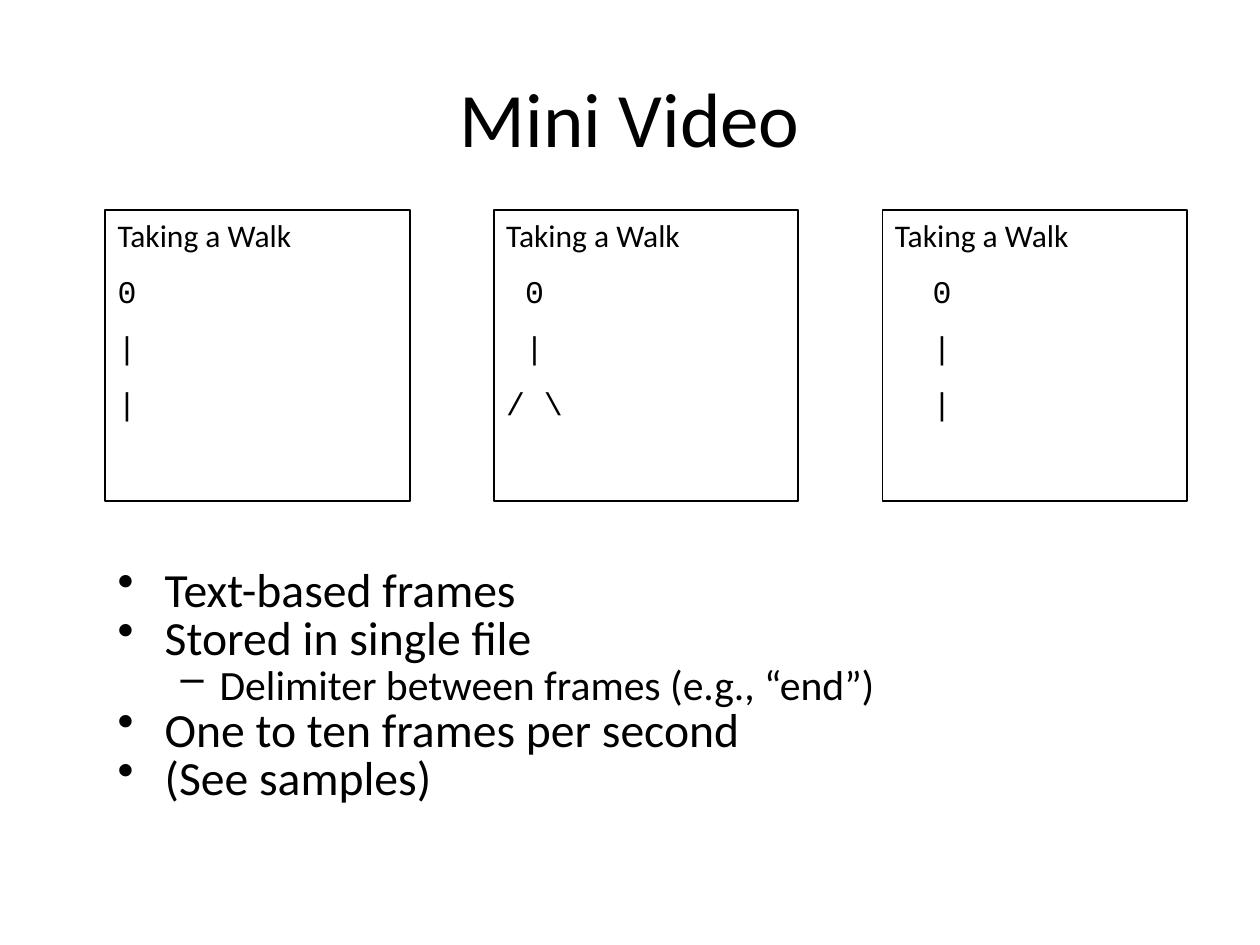
import pptx
import pptx.dml.color
import pptx.enum.shapes
import pptx.enum.text
import pptx.oxml.ns
import pptx.util
from lxml import etree

Cm = pptx.util.Cm
Pt = pptx.util.Pt
COLOURS = {"ink": "000000", "paper": "FFFFFF"}
TEXT_FONT = "Calibri"
FIGURE_FONT = "Courier New"

# Each video frame: how many columns each line is moved in, and its text
FRAMES = [
    [(0, "0"), (0, "|"), (0, "|")],
    [(1, "0"), (1, "|"), (0, "/ \\")],
    [(2, "0"), (2, "|"), (2, "|")],
]
POINTS = [
    (0, "Text-based frames"),
    (0, "Stored in single file"),
    (1, "Delimiter between frames (e.g., “end”)"),
    (0, "One to ten frames per second"),
    (0, "(See samples)"),
]
# Per level: bullet, text size, left margin and hanging indent in cm
LEVELS = [("•", 27.2, 0.95, 0.95), ("–", 23.8, 2.06, 0.79)]


def colour(name):
    return pptx.dml.color.RGBColor.from_string(COLOURS[name])


def add_span(para, text, size, font=TEXT_FONT):
    span = para.add_run()
    span.text = text
    span.font.size = Pt(size)
    span.font.name = font
    span.font.color.rgb = colour("ink")


def next_para(text_frame, index):
    return text_frame.paragraphs[0] if index == 0 else text_frame.add_paragraph()


def set_indent(para, margin, hanging=0):
    properties = para._p.get_or_add_pPr()
    properties.set("marL", str(Cm(margin)))
    properties.set("indent", str(-Cm(hanging)))
    return properties


def add_title(page, left, top, width, height):
    box = page.shapes.add_textbox(Cm(left), Cm(top), Cm(width), Cm(height))
    box.text_frame.word_wrap = True
    box.text_frame.vertical_anchor = pptx.enum.text.MSO_ANCHOR.MIDDLE
    para = box.text_frame.paragraphs[0]
    para.alignment = pptx.enum.text.PP_ALIGN.CENTER
    add_span(para, "Mini Video", 44)


def add_video_frame(page, figure, left, top, width, height):
    box = page.shapes.add_shape(pptx.enum.shapes.MSO_SHAPE.RECTANGLE,
                                Cm(left), Cm(top), Cm(width), Cm(height))
    box.shadow.inherit = False
    box.fill.background()
    box.line.color.rgb = colour("ink")
    box.line.width = Pt(1)
    box.text_frame.word_wrap = True
    box.text_frame.vertical_anchor = pptx.enum.text.MSO_ANCHOR.TOP

    column = 0.38  # width of one 18 pt monospaced character
    lines = [(0, "Taking a Walk", TEXT_FONT)]
    lines += [(shift, text, FIGURE_FONT) for shift, text in figure]
    for index, (shift, text, font) in enumerate(lines):
        para = next_para(box.text_frame, index)
        para.alignment = pptx.enum.text.PP_ALIGN.LEFT
        para.space_before = Pt(10.5 if index else 0)
        set_indent(para, shift * column)
        add_span(para, text, 18, font)


def add_film_strip(page, left, top, width, height):
    frame_width = 6.14
    pitch = (width - frame_width) / (len(FRAMES) - 1)
    for index, figure in enumerate(FRAMES):
        add_video_frame(page, figure, left + index * pitch, top, frame_width, height)


def add_points(page, left, top, width, height):
    box = page.shapes.add_textbox(Cm(left), Cm(top), Cm(width), Cm(height))
    box.text_frame.word_wrap = True
    for index, (level, text) in enumerate(POINTS):
        bullet, size, margin, hanging = LEVELS[level]
        para = next_para(box.text_frame, index)
        para.level = level
        para.line_spacing = 0.75
        para.space_before = Pt(3.2 if index else 0)
        properties = set_indent(para, margin, hanging)
        mark = etree.SubElement(properties, pptx.oxml.ns.qn("a:buChar"))
        mark.set("char", bullet)
        add_span(para, text, size)


def main():
    deck = pptx.Presentation()
    deck.slide_width, deck.slide_height = Cm(25.4), Cm(19.05)
    page = deck.slides.add_slide(deck.slide_layouts[6])
    page.background.fill.solid()
    page.background.fill.fore_color.rgb = colour("paper")

    add_title(page, 1.27, 0.76, 22.86, 3.18)
    add_film_strip(page, 2.12, 4.23, 21.81, 5.87)
    add_points(page, 2.12, 11.43, 21.59, 5.08)
    deck.save("out.pptx")


if __name__ == "__main__":
    main()
